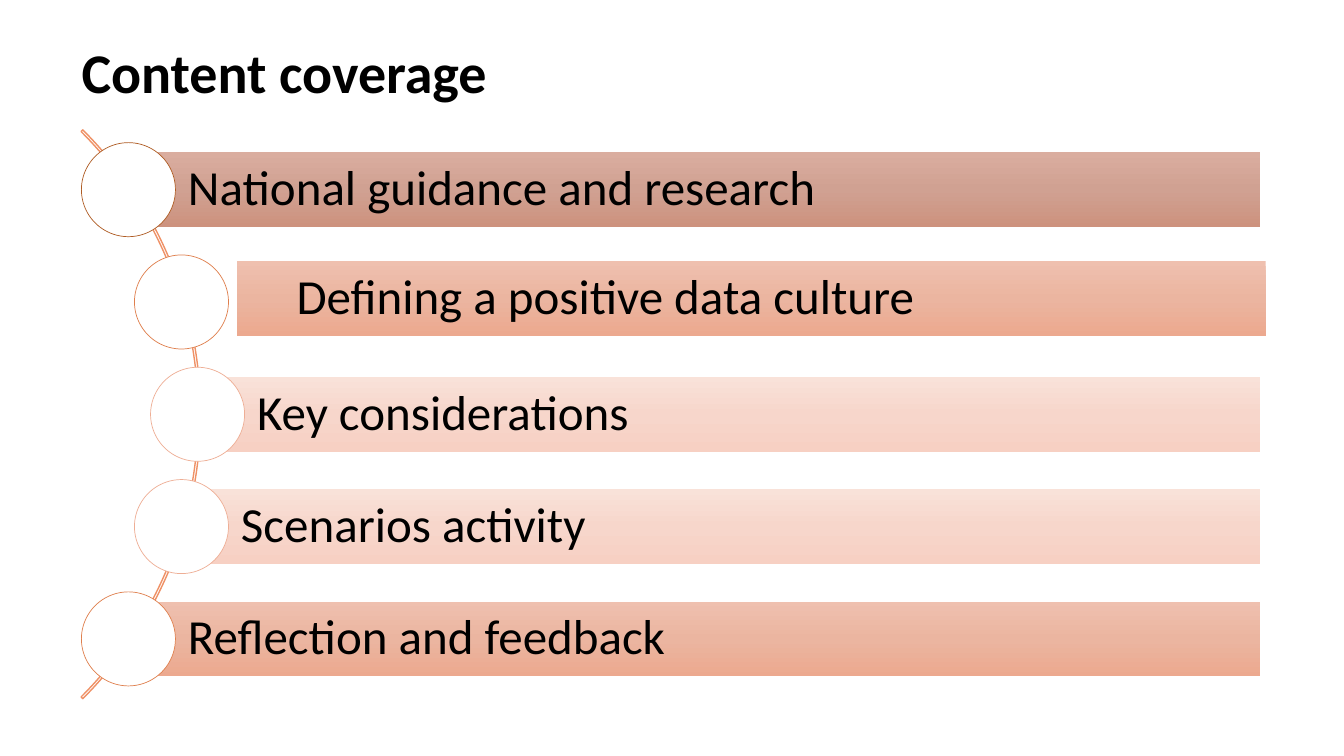
from copy import deepcopy
from math import sqrt

from pptx import Presentation
from pptx.dml.color import RGBColor
from pptx.enum.shapes import MSO_SHAPE as Shape
from pptx.enum.text import MSO_ANCHOR as Anchor, MSO_AUTO_SIZE as Fit, PP_ALIGN as Align
from pptx.oxml.ns import qn
from pptx.util import Cm, Pt

# Bar shades from top to bottom, then the outline of the dot
DARK = ("DAAD9F", "D0A192", "CD927E", "AF5C24")
MID = ("EFC0AF", "EBB5A0", "ECA98F", "DF7F4D")
PALE = ("F9E2D9", "F7D6CB", "F7D0C3", "EEAE95")

# Text, shades, shift of the bar in cm (right, down)
TOPICS = [
    ("National guidance and research", DARK, (0, 0)),
    ("Defining a positive data culture", MID, (0.14, -0.09)),
    ("Key considerations", PALE, (0, 0)),
    ("Scenarios activity", PALE, (0, 0)),
    ("Reflection and feedback", MID, (0, 0)),
]


def color(code):
    return RGBColor.from_string(code)


def write(frame, text, size, bold=False):
    frame.auto_size = Fit.NONE
    frame.word_wrap = True
    frame.vertical_anchor = Anchor.MIDDLE
    par = frame.paragraphs[0]
    par.alignment = Align.LEFT
    run = par.add_run()
    run.text = text
    font = run.font
    font.name, font.size, font.bold = "Calibri", Pt(size), bold
    font.color.rgb = color("000000")
    return par


def add_part(slide, kind, left, top, width, height):
    part = slide.shapes.add_shape(kind, Cm(left), Cm(top), Cm(width), Cm(height))
    part.shadow.inherit = False
    return part


def set_line(part, code, width):
    part.line.color.rgb = color(code)
    part.line.width = Pt(width)


def shade(part, codes):
    fill = part.fill
    fill.gradient()
    fill.gradient_angle = 270
    # Put a middle stop between the two default ones
    first = part._element.spPr.find(qn("a:gradFill")).find(qn("a:gsLst"))[0]
    first.addnext(deepcopy(first))
    for stop, code, place in zip(fill.gradient_stops, codes, (0, 0.5, 1)):
        stop.color.rgb = color(code)
        stop.position = place


def add_title(slide, left, top, width, height):
    title = slide.shapes.title
    title.left, title.top = Cm(left), Cm(top)
    title.width, title.height = Cm(width), Cm(height)
    write(title.text_frame, "Content coverage", 40, True)


def add_bar(slide, text, codes, left, top, width, height):
    bar = add_part(slide, Shape.RECTANGLE, left, top, width, height)
    shade(bar, codes)
    bar.line.fill.background()
    frame = bar.text_frame
    frame.margin_left = Cm(1.5)
    frame.margin_right = frame.margin_top = frame.margin_bottom = Cm(0.25)
    par = write(frame, text, 35)
    par.line_spacing = 0.9


def add_list(slide, left, top, width, height):
    # The arc spans the box height; its centre lies left of the slide
    size, bar_high, step, reach = 2.37, 1.88, 2.83, 10.06
    mid_x, mid_y = left - 7.14, top + height / 2
    arc_size = 20.27
    arc = add_part(slide, Shape.BLOCK_ARC, mid_x - arc_size / 2,
                   mid_y - arc_size / 2, arc_size, arc_size)
    for i, value in enumerate((189, 27, 0.003)):
        arc.adjustments[i] = value
    arc.fill.background()
    set_line(arc, "EF9166", 1)

    # Each bar starts at the centre of its dot, which sits on the arc
    for i, (text, codes, (right, down)) in enumerate(TOPICS):
        drop = (i - (len(TOPICS) - 1) / 2) * step
        x, y = mid_x + sqrt(reach ** 2 - drop ** 2), mid_y + drop
        start = x + right * (10 if right else 0)
        add_bar(slide, text, codes, start, y + down - bar_high / 2,
                left + width + right - start, bar_high)
        dot = add_part(slide, Shape.OVAL, x - size / 2, y - size / 2, size, size)
        dot.fill.solid()
        dot.fill.fore_color.rgb = color("FFFFFF")
        set_line(dot, codes[3], 0.5)


def main():
    deck = Presentation()
    deck.slide_width, deck.slide_height = Cm(33.87), Cm(19.05)
    slide = deck.slides.add_slide(deck.slide_layouts[5])
    add_title(slide, 1.8, 1.1, 14.73, 1.37)
    add_list(slide, 2.06, 3.28, 29.7, 14.32)
    deck.save("out.pptx")


if __name__ == "__main__":
    main()
